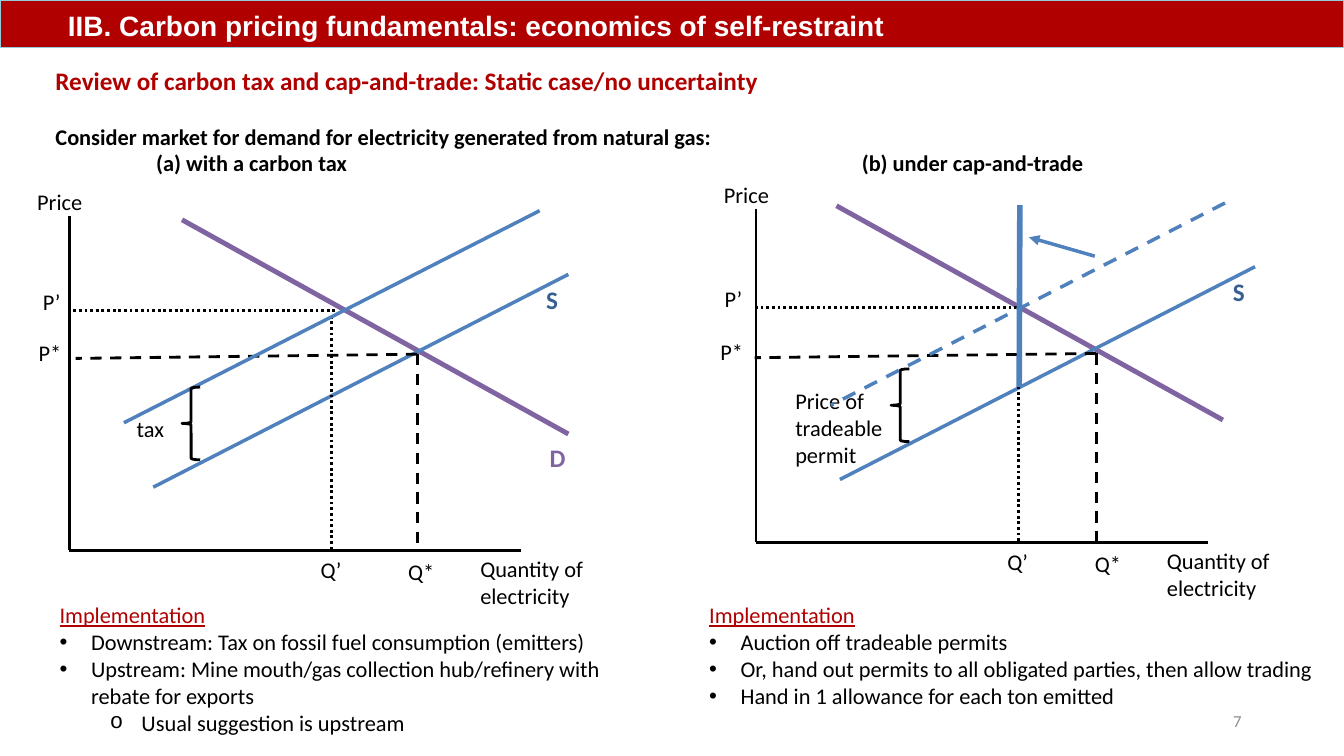
"""Build a slide comparing a carbon tax with cap-and-trade."""
from dataclasses import dataclass

from lxml import etree
from pptx import Presentation
from pptx import util as u
from pptx.dml.color import RGBColor
from pptx.enum import dml, shapes, text
from pptx.oxml.ns import qn


@dataclass(frozen=True)
class Theme:
    """Colours, fonts and type sizes of the slide."""
    red: str = "B00000"
    white: str = "FFFFFF"
    black: str = "000000"
    grey: str = "8C8C8C"
    edge: str = "93CDDD"
    supply: str = "4F81BD"
    supply_label: str = "376092"
    demand: str = "8064A2"
    title_font: str = "Arial"
    body_font: str = "Calibri"
    title: int = 20
    heading: int = 18
    body: int = 16
    small: int = 12


THEME = Theme()
DASH = dml.MSO_LINE.DASH
DOT = dml.MSO_LINE.ROUND_DOT


def add_run(paragraph, words, color=THEME.black, size=THEME.body, bold=False,
            underline=False, font=THEME.body_font):
    """Append one formatted run."""
    run = paragraph.add_run()
    run.text = words
    run.font.name, run.font.size = font, u.Pt(size)
    run.font.bold, run.font.underline = bold, underline
    run.font.color.rgb = RGBColor.from_string(color)


def add_frame(slide, box, wrap=True):
    """Add a text box and return its text frame."""
    frame = slide.shapes.add_textbox(*map(u.Pt, box)).text_frame
    frame.word_wrap = wrap
    return frame


def add_label(slide, origin, offset, words, width=46, **style):
    """Place a chart label at an offset from the axes' origin."""
    box = (origin[0] + offset[0], origin[1] + offset[1], width, 27)
    add_run(add_frame(slide, box).paragraphs[0], words, **style)


def add_line(slide, origin, start, end, color=THEME.black, width=2, dash=None, arrow=False):
    """Draw a line between two offsets from the axes' origin."""
    ends = [u.Pt(base + step) for point in (start, end) for base, step in zip(origin, point)]
    connector = slide.shapes.add_connector(shapes.MSO_CONNECTOR.STRAIGHT, *ends)
    connector.line.color.rgb = RGBColor.from_string(color)
    connector.line.width = u.Pt(width)
    if dash:
        connector.line.dash_style = dash
    properties = connector._element.spPr
    if arrow:
        etree.SubElement(properties.find(qn("a:ln")), qn("a:tailEnd"), type="triangle")
    etree.SubElement(properties, qn("a:effectLst"))


def add_brace(slide, origin, offset):
    """Draw the brace that measures the gap between the supply curves."""
    brace = slide.shapes.add_shape(
        shapes.MSO_SHAPE.LEFT_BRACE, u.Pt(origin[0] + offset[0]),
        u.Pt(origin[1] + offset[1]), u.Pt(13), u.Pt(52))
    brace.shadow.inherit = False
    brace.fill.background()
    brace.line.color.rgb = RGBColor.from_string(THEME.black)
    brace.line.width = u.Pt(2)


def draw_title(slide, box):
    """Turn the title placeholder into the red banner."""
    title = slide.shapes.title
    title.left, title.top, title.width, title.height = map(u.Pt, box)
    title.fill.solid()
    title.fill.fore_color.rgb = RGBColor.from_string(THEME.red)
    title.line.color.rgb = RGBColor.from_string(THEME.edge)
    title.line.width = u.Pt(0)
    frame = title.text_frame
    frame.auto_size = text.MSO_AUTO_SIZE.NONE
    frame.vertical_anchor = text.MSO_ANCHOR.BOTTOM
    frame.margin_left = u.Pt(48.5)
    frame.paragraphs[0].alignment = text.PP_ALIGN.LEFT
    add_run(frame.paragraphs[0], "IIB. Carbon pricing fundamentals: economics of self-restraint",
            THEME.white, THEME.title, True, font=THEME.title_font)


def draw_intro(slide, box):
    """Write the heading, the premise and the two panel captions."""
    frame = add_frame(slide, box, wrap=False)
    add_run(frame.paragraphs[0],
            "Review of carbon tax and cap-and-trade: Static case/no uncertainty",
            THEME.red, THEME.heading, True)
    premise = frame.add_paragraph()
    premise.space_before = u.Pt(19.5)
    add_run(premise, "Consider market for demand for electricity generated from natural gas:",
            bold=True)
    captions = frame.add_paragraph()
    tabs = etree.SubElement(captions._p.get_or_add_pPr(), qn("a:tabLst"))
    for stop in (72, 576):
        etree.SubElement(tabs, qn("a:tab"), pos=str(u.Pt(stop)), algn="l")
    add_run(captions, "\t(a) with a carbon tax\t(b) under cap-and-trade", bold=True)


def draw_market(slide, origin, demand_start, optimum, capped, labels_left):
    """Draw the axes, curves, guides and labels common to both panels."""
    demand_end = (demand_start[0] + 276, demand_start[1] + 153)
    add_line(slide, origin, demand_start, demand_end, THEME.demand, 3.5)
    add_line(slide, origin, (356.5, -197), (60, -45), THEME.supply, 2.5)
    add_line(slide, origin, (0, -238.5), (0, 0))
    add_line(slide, origin, (323, 0), (0, 0))
    add_line(slide, origin, optimum, (optimum[0], optimum[1] + 140), dash=DASH)
    add_line(slide, origin, optimum, (optimum[0] - 244, optimum[1] + 3), dash=DASH)
    add_line(slide, origin, capped, (capped[0] - 189, capped[1]), dash=DOT)
    add_line(slide, origin, (187.5, capped[1] + 4), (187.5, -1), dash=DOT)
    add_label(slide, origin, (333.5, -193.5), "S", color=THEME.supply_label,
              size=THEME.heading, bold=True)
    for offset, words, width in (
            ((-30, -262), "Price", 63), ((286.5, 0), "Quantity of electricity", 108),
            ((172.5, 0.5), "Q’", 46), ((235, 2), "Q*", 46),
            ((labels_left, capped[1] - 19.5), "P’", 46),
            ((labels_left - 3, optimum[1] - 14.5), "P*", 46)):
        add_label(slide, origin, offset, words, width)


def draw_tax_panel(slide, origin):
    """Draw the market under a carbon tax."""
    draw_market(slide, origin, (80.5, -236), (248.5, -140), (190, -171.5), -26)
    add_line(slide, origin, (336, -242.5), (39, -91), THEME.supply, 2.5)
    add_brace(slide, origin, (80.5, -116.5))
    add_label(slide, origin, (41, -100), "tax", 63)
    add_label(slide, origin, (336, -80.5), "D", 91,
              color=THEME.demand, size=THEME.heading, bold=True)


def draw_permit_panel(slide, origin):
    """Draw the market under cap-and-trade."""
    draw_market(slide, origin, (57.5, -240.5), (243, -135), (186.5, -168), -29.5)
    add_brace(slide, origin, (96.5, -124))
    add_label(slide, origin, (21, -114.5), "Price of tradeable permit", 88.5)
    add_line(slide, origin, (335, -242.5), (53.5, -98), THEME.supply, 2.5, DASH)
    add_line(slide, origin, (188.5, -241), (188, -111), THEME.supply, 4)
    add_line(slide, origin, (242, -204.5), (195, -218), THEME.supply, 2.5, arrow=True)


def draw_implementation(slide, box, points):
    """List the implementation points, each with its level."""
    frame = add_frame(slide, box)
    add_run(frame.paragraphs[0], "Implementation", THEME.red, underline=True)
    for level, words in points:
        paragraph = frame.add_paragraph()
        paragraph.level = level
        properties = paragraph._p.get_or_add_pPr()
        properties.set("marL", str(u.Pt(22.5 + 36 * level)))
        properties.set("indent", str(u.Pt(-22.5)))
        etree.SubElement(properties, qn("a:buFont"), typeface=("Arial", "Courier New")[level])
        etree.SubElement(properties, qn("a:buChar"), char="•o"[level])
        add_run(paragraph, words)


def draw_page_number(slide, box):
    """Write the page number at the lower right."""
    frame = add_frame(slide, box)
    frame.vertical_anchor = text.MSO_ANCHOR.MIDDLE
    frame.paragraphs[0].alignment = text.PP_ALIGN.RIGHT
    add_run(frame.paragraphs[0], "7", THEME.grey, THEME.small)


def main():
    """Assemble and save the slide."""
    deck = Presentation()
    deck.slide_width, deck.slide_height = u.Pt(960), u.Pt(540)
    slide = deck.slides.add_slide(deck.slide_layouts[5])
    draw_title(slide, (0, 0, 960, 34))
    draw_page_number(slide, (678, 500.5, 216, 29))
    draw_intro(slide, (32.5, 43, 757, 87))
    draw_tax_panel(slide, (49.5, 393))
    draw_permit_panel(slide, (540, 387.5))
    draw_implementation(slide, (35.5, 426, 443, 104.5), (
        (0, "Downstream: Tax on fossil fuel consumption (emitters)"),
        (0, "Upstream: Mine mouth/gas collection hub/refinery with rebate for exports"),
        (1, "Usual suggestion is upstream")))
    draw_implementation(slide, (499.5, 426, 454.5, 85), (
        (0, "Auction off tradeable permits"),
        (0, "Or, hand out permits to all obligated parties, then allow trading"),
        (0, "Hand in 1 allowance for each ton emitted")))
    deck.save("out.pptx")


if __name__ == "__main__":
    main()
